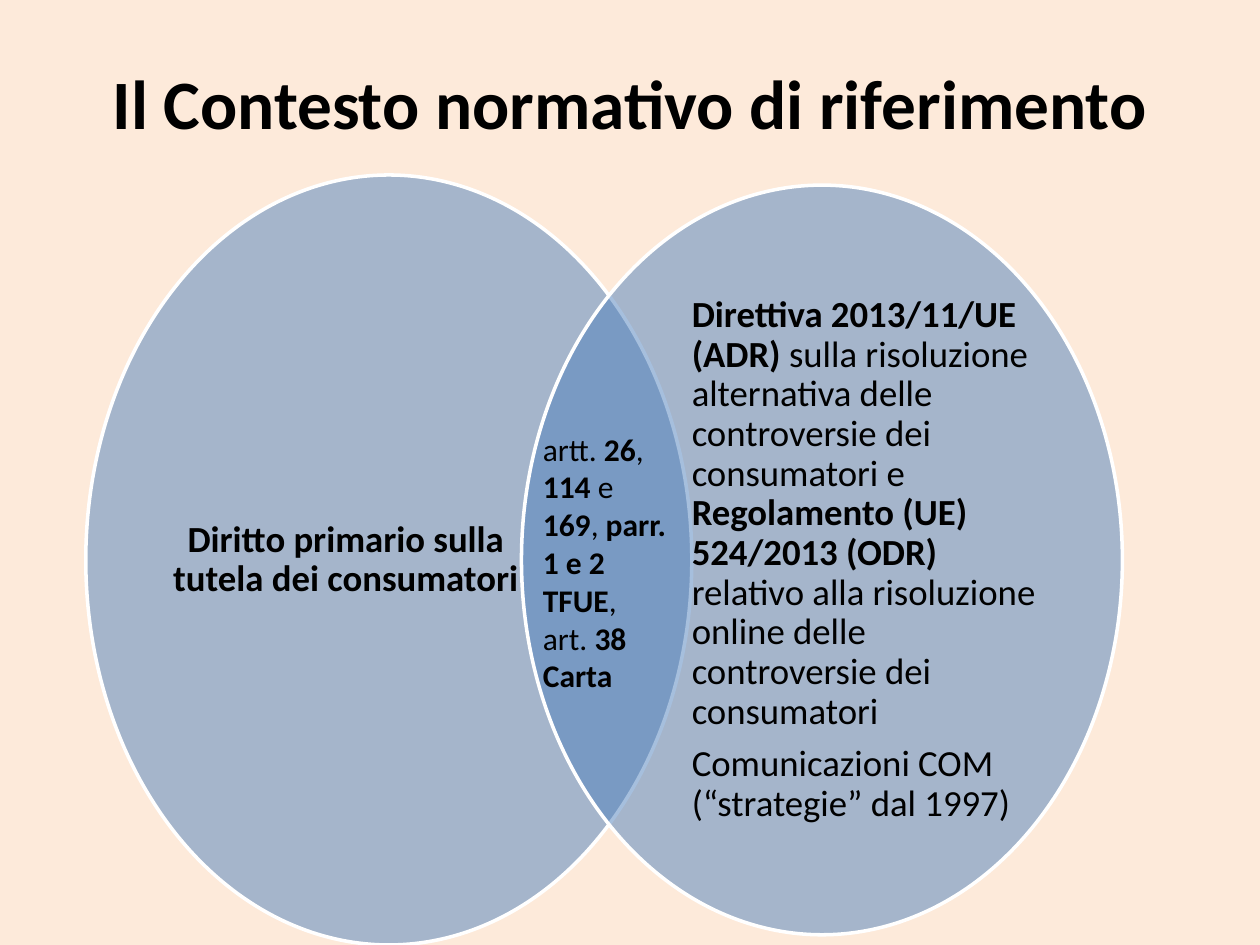
from dataclasses import dataclass

from lxml import etree
from pptx import Presentation
from pptx.dml.color import RGBColor
from pptx.enum.shapes import MSO_SHAPE
from pptx.enum.text import MSO_ANCHOR, PP_ALIGN
from pptx.oxml.ns import qn
from pptx.util import Pt

OVAL = MSO_SHAPE.OVAL
TOP, MIDDLE = MSO_ANCHOR.TOP, MSO_ANCHOR.MIDDLE
LEFT, CENTER = PP_ALIGN.LEFT, PP_ALIGN.CENTER
BLANK_LAYOUT = 6


@dataclass(frozen=True)
class Theme:
    font: str = "Calibri"
    background: RGBColor = RGBColor(0xFD, 0xEA, 0xDA)
    circle: RGBColor = RGBColor(0x4F, 0x81, 0xBD)
    outline: RGBColor = RGBColor(0xFF, 0xFF, 0xFF)
    text: RGBColor = RGBColor(0, 0, 0)
    circle_opacity: int = 50
    outline_width: float = 2
    title_size: float = 39.6
    body_size: float = 21
    overlap_size: float = 18


THEME = Theme()

TITLE = "*Il Contesto normativo di riferimento*"
PRIMARY_LAW = "*Diritto primario sulla tutela dei consumatori*"
SECONDARY_LAW = [
    "*Direttiva 2013/11/UE (ADR) *sulla risoluzione alternativa delle "
    "controversie dei consumatori e *Regolamento (UE) 524/2013 (ODR) *"
    "relativo alla risoluzione online delle controversie dei consumatori",
    "Comunicazioni COM (“strategie” dal 1997)",
]
SHARED_ARTICLES = "artt. *26*, *114* e *169*, *parr. 1 e 2 TFUE*, art. *38 Carta*"


def points(*lengths):
    return [Pt(length) for length in lengths]


def add_circle(page, frame):
    """Add one translucent set of the Venn diagram."""
    circle = page.shapes.add_shape(OVAL, *points(*frame))
    circle.shadow.inherit = False
    circle.fill.solid()
    circle.fill.fore_color.rgb = THEME.circle
    color = circle.fill._xPr.find(".//" + qn("a:srgbClr"))
    alpha = etree.SubElement(color, qn("a:alpha"))
    alpha.set("val", str(THEME.circle_opacity * 1000))
    circle.line.color.rgb = THEME.outline
    circle.line.width = Pt(THEME.outline_width)


def write_spans(paragraph, marked_text):
    """Add runs, setting the text between asterisks in bold."""
    for index, text in enumerate(marked_text.split("*")):
        if text:
            span = paragraph.add_run()
            span.text = text
            span.font.bold = index % 2 == 1


def add_text(page, frame, texts, size, align=LEFT, anchor=MIDDLE):
    box = page.shapes.add_textbox(*points(*frame))
    text_frame = box.text_frame
    text_frame.word_wrap = True
    text_frame.vertical_anchor = anchor
    for index, text in enumerate(texts):
        paragraph = text_frame.add_paragraph() if index else text_frame.paragraphs[0]
        paragraph.alignment = align
        paragraph.font.name = THEME.font
        paragraph.font.size = Pt(size)
        paragraph.font.color.rgb = THEME.text
        write_spans(paragraph, text)
    return text_frame


def add_circle_text(page, frame, texts, align=LEFT):
    """Add tightly set text without margins."""
    text_frame = add_text(page, frame, texts, THEME.body_size, align)
    text_frame.margin_left = text_frame.margin_right = 0
    text_frame.margin_top = text_frame.margin_bottom = 0
    for paragraph in text_frame.paragraphs:
        paragraph.line_spacing = 0.9
        paragraph.space_after = Pt(0.35 * THEME.body_size)


def main():
    deck = Presentation()
    deck.slide_width, deck.slide_height = points(720, 540)
    page = deck.slides.add_slide(deck.slide_layouts[BLANK_LAYOUT])
    page.background.fill.solid()
    page.background.fill.fore_color.rgb = THEME.background

    add_text(page, (36, 21.6, 648, 72.7), [TITLE], THEME.title_size, CENTER)
    add_circle(page, (49, 100, 346.3, 440))
    add_circle_text(page, (97.9, 152, 199.5, 336.2), [PRIMARY_LAW], CENTER)
    add_circle(page, (298, 105.8, 343.4, 428.4))
    add_circle_text(page, (395.3, 156.2, 198, 327.6), SECONDARY_LAW)
    add_text(page, (303.1, 241.9, 85, 159.8), [SHARED_ARTICLES],
             THEME.overlap_size, anchor=TOP)

    deck.save("out.pptx")


if __name__ == "__main__":
    main()
